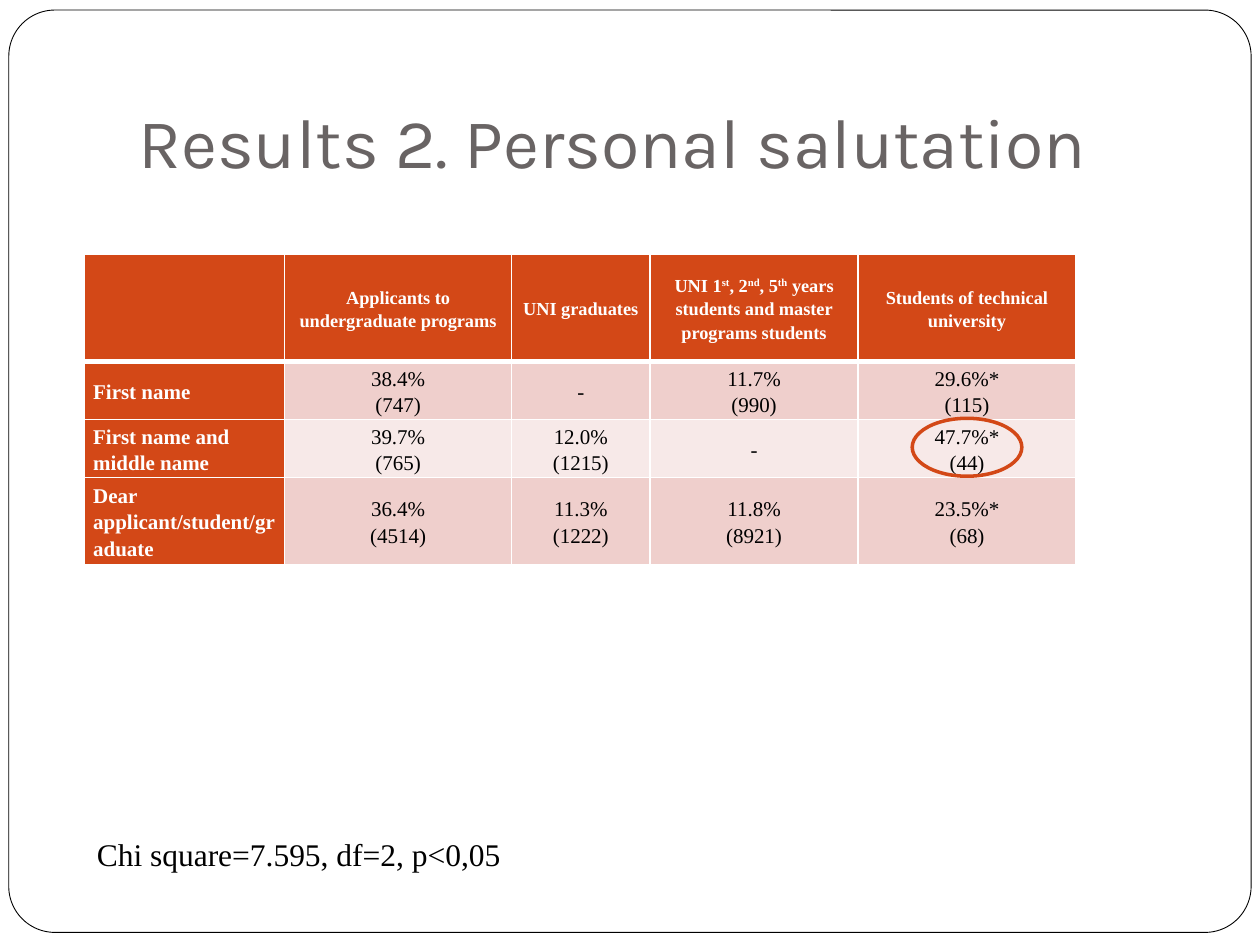
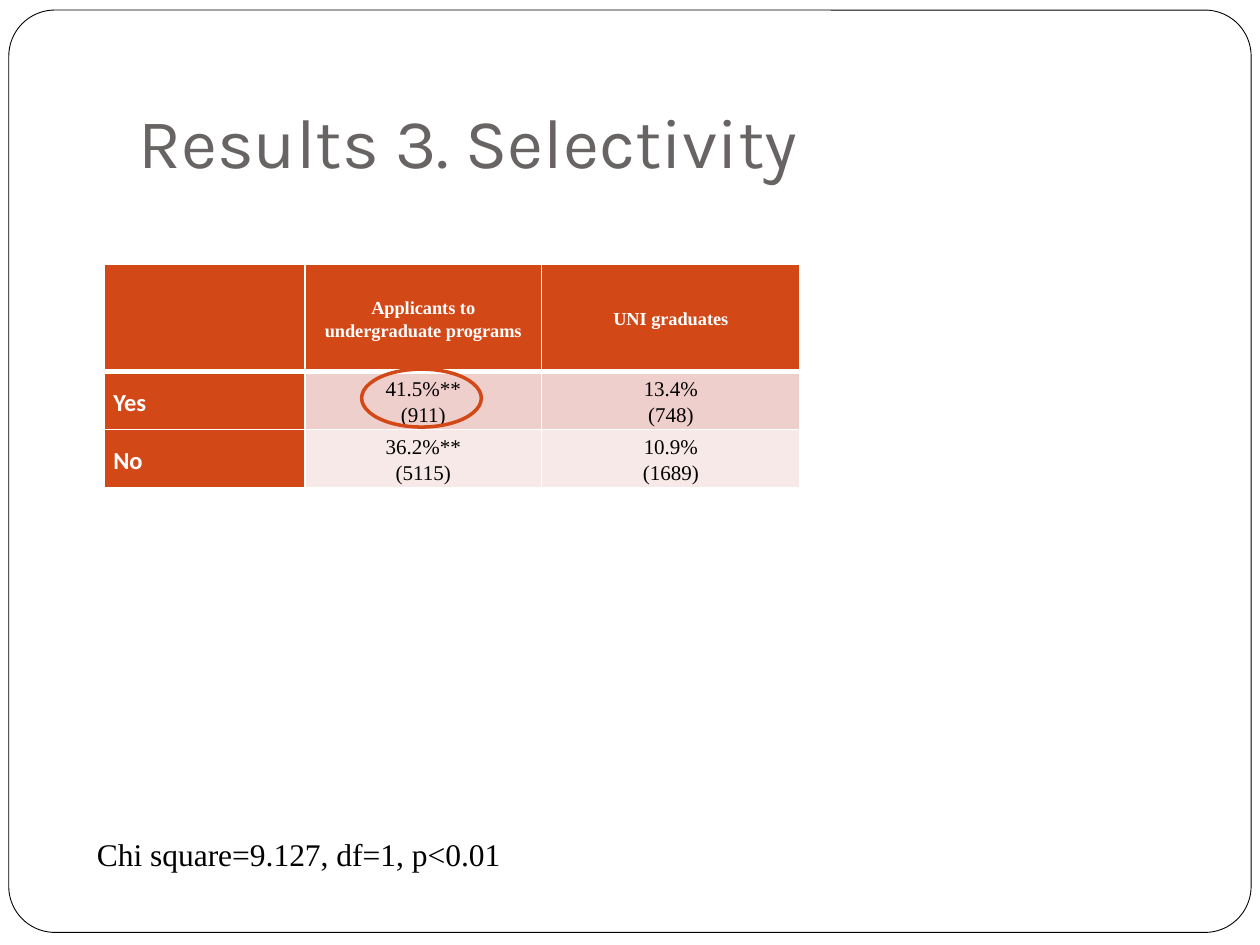
from dataclasses import dataclass

from lxml.etree import SubElement
from pptx import Presentation
from pptx.dml.color import RGBColor
from pptx.enum.shapes import MSO_SHAPE as Preset
from pptx.enum.text import MSO_ANCHOR as Anchor, MSO_AUTO_SIZE as AutoSize, PP_ALIGN as Align
from pptx.oxml.ns import qn
from pptx.util import Inches, Pt

WHITE, BLACK, GREY, ORANGE = "FFFFFF", "000000", "696464", "D34817"
BANDS = ("EFCFCC", "F7E9E8")
SERIF = "Times New Roman"
HEADER_HEIGHT, ROW_HEIGHT = 0.85, 0.28
UNDERGRADUATES = "Applicants to undergraduate programs"
GRADUATES = "UNI graduates"


@dataclass(frozen=True)
class Area:
    """A place on the page, in inches."""
    left: float
    top: float
    width: float
    height: float

    def lengths(self) -> tuple:
        """Return the four lengths for python-pptx."""
        return tuple(map(Inches, (self.left, self.top, self.width, self.height)))


@dataclass(frozen=True)
class Style:
    """The look of a piece of text."""
    size: float
    font: str = SERIF
    colour: str = BLACK
    bold: bool = False
    align: Align = Align.LEFT
    spacing: float = 1.0


@dataclass(frozen=True)
class Result:
    """The content of one results page."""
    title: str
    area: Area
    columns: tuple
    rows: tuple
    label: Style
    highlight: Area
    test: str
    test_width: float


TITLE = Style(40, "Karla", GREY)
TEST = Style(18)
HEADER = Style(10.5, colour=WHITE, bold=True, align=Align.CENTER, spacing=1.15)
VALUE = Style(12, align=Align.CENTER, spacing=1.15)

RESULTS = (
    Result(
        "Results 2. Personal salutation",
        Area(0.67, 2.02, 7.87, 2.46),
        (1.59, 1.8, 1.1, 1.65, 1.73),
        (
            ("", UNDERGRADUATES, GRADUATES,
             "UNI 1^st^, 2^nd^, 5^th^ years students and master programs students",
             "Students of technical university"),
            ("First name", "38.4%\n(747)", "-", "11.7%\n(990)", "29.6%*\n(115)"),
            ("First name and middle name", "39.7%\n(765)", "12.0%\n(1215)", "-",
             "47.7%*\n(44)"),
            ("Dear applicant/student/graduate", "36.4%\n(4514)", "11.3%\n(1222)",
             "11.8%\n(8921)", "23.5%*\n(68)"),
        ),
        Style(12, colour=WHITE, bold=True, spacing=1.15),
        Area(7.24, 3.32, 0.87, 0.46),
        "Chi square=7.595, df=2, p<0,05",
        3.74,
    ),
    Result(
        "Results 3. Selectivity",
        Area(0.83, 2.1, 5.51, 1.77),
        (1.59, 1.88, 2.05),
        (
            ("", UNDERGRADUATES, GRADUATES),
            ("Yes", "41.5%**\n(911)", "13.4%\n(748)"),
            ("No", "36.2%**\n(5115)", "10.9%\n(1689)"),
        ),
        Style(14, "Calibri", WHITE, True, spacing=1.15),
        Area(2.87, 2.93, 0.95, 0.46),
        "Chi square=9.127, df=1, p<0.01",
        3.84,
    ),
)


def rgb(value: str) -> RGBColor:
    """Turn a hex string into a colour."""
    return RGBColor.from_string(value)


def write(frame, text: str, style: Style) -> None:
    """Write lines of text, with the parts between carets raised."""
    for number, line in enumerate(text.split("\n")):
        para = frame.add_paragraph() if number else frame.paragraphs[0]
        para.alignment = style.align
        para.line_spacing = style.spacing
        for index, part in enumerate(line.split("^")):
            span = para.add_run()
            span.text = part
            span.font.name = style.font
            span.font.size = Pt(style.size)
            span.font.bold = style.bold
            span.font.color.rgb = rgb(style.colour)
            if index % 2:
                span.font._element.set("baseline", "30000")


def add_outline(page, preset: Preset, area: Area, colour: str, width: float):
    """Draw an unfilled preset shape."""
    shape = page.shapes.add_shape(preset, *area.lengths())
    shape.shadow.inherit = False
    shape.fill.background()
    shape.line.color.rgb = rgb(colour)
    shape.line.width = Pt(width)
    return shape


def add_title(page, text: str) -> None:
    """Place the page title."""
    frame = page.shapes.add_textbox(*Area(1, 0.3, 8.5, 1.25).lengths()).text_frame
    frame.word_wrap = True
    frame.vertical_anchor = Anchor.BOTTOM
    frame.margin_bottom = Inches(0.1)
    write(frame, text, TITLE)


def add_test(page, text: str, width: float) -> None:
    """Place the significance test below the table."""
    frame = page.shapes.add_textbox(*Area(0.67, 6.58, width, 0.4).lengths()).text_frame
    frame.word_wrap = False
    frame.auto_size = AutoSize.SHAPE_TO_FIT_TEXT
    write(frame, text, TEST)


def set_borders(cell, top: float, bottom: float) -> None:
    """Give a cell white borders."""
    properties = cell._tc.get_or_add_tcPr()
    for side, width in (("L", 1), ("R", 1), ("T", top), ("B", bottom)):
        line = SubElement(properties, qn(f"a:ln{side}"), w=str(Pt(width)))
        fill = SubElement(line, qn("a:solidFill"))
        SubElement(fill, qn("a:srgbClr"), val=WHITE)


def add_results_table(page, result: Result) -> None:
    """Draw the table with its header row, label column and bands."""
    holder = page.shapes.add_table(
        len(result.rows), len(result.columns), *result.area.lengths())
    table = holder.table
    for column, width in zip(table.columns, result.columns):
        column.width = Inches(width)
    for row, texts in enumerate(result.rows):
        table.rows[row].height = Inches(ROW_HEIGHT if row else HEADER_HEIGHT)
        for column, text in enumerate(texts):
            cell = table.cell(row, column)
            set_borders(cell, 3 if row == 1 else 1, 1 if row else 3)
            cell.fill.solid()
            is_value = row and column
            cell.fill.fore_color.rgb = rgb(BANDS[(row - 1) % 2] if is_value else ORANGE)
            cell.vertical_anchor = Anchor.MIDDLE
            cell.margin_left = cell.margin_right = Inches(0.07)
            cell.margin_top = cell.margin_bottom = 0
            if text:
                style = HEADER if not row else VALUE if column else result.label
                write(cell.text_frame, text, style)
    holder.height = Inches(result.area.height)


def add_result_page(deck, result: Result) -> None:
    """Build one results page."""
    page = deck.slides.add_slide(deck.slide_layouts[6])
    border = add_outline(
        page, Preset.ROUNDED_RECTANGLE, Area(0.07, 0.08, 9.86, 7.32), BLACK, 0.5)
    border.adjustments[0] = 0.05
    border.fill.solid()
    border.fill.fore_color.rgb = rgb(WHITE)
    add_title(page, result.title)
    add_results_table(page, result)
    add_test(page, result.test, result.test_width)
    add_outline(page, Preset.OVAL, result.highlight, ORANGE, 2)


def main() -> None:
    """Build and save the deck."""
    deck = Presentation()
    deck.slide_width, deck.slide_height = Inches(10), Inches(7.5)
    for result in RESULTS:
        add_result_page(deck, result)
    deck.save("out.pptx")


if __name__ == "__main__":
    main()
